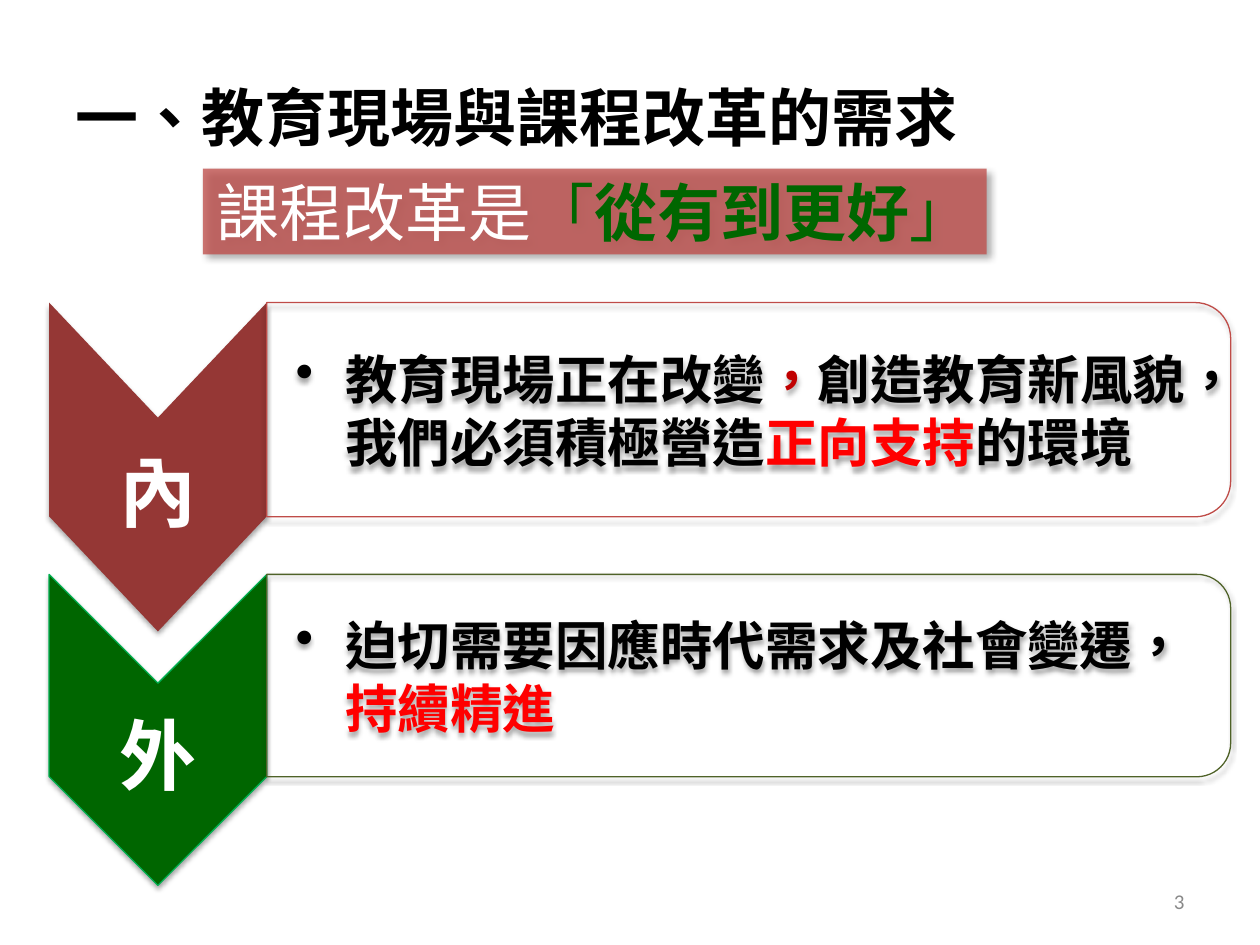
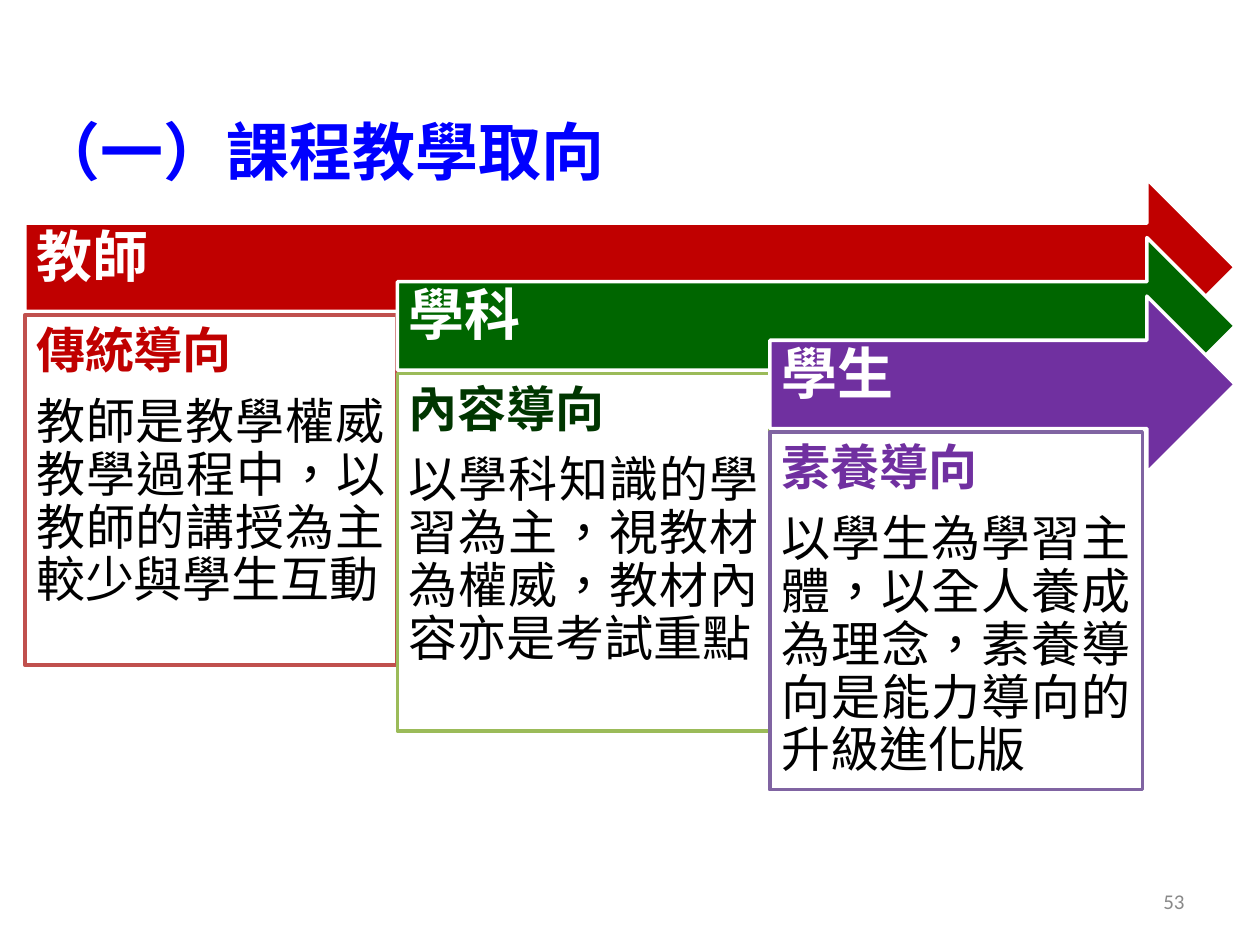
from dataclasses import dataclass
from math import cos, pi, sin

from lxml.etree import SubElement
from pptx import Presentation
from pptx.dml.color import RGBColor
from pptx.enum.lang import MSO_LANGUAGE_ID
from pptx.enum.shapes import MSO_SHAPE
from pptx.enum.text import MSO_ANCHOR, PP_ALIGN
from pptx.oxml.ns import qn
from pptx.util import Cm, Pt


@dataclass(frozen=True)
class Theme:
    """Hold the colours, fonts and type sizes of the deck."""
    face: str = "Noto Sans CJK SC"
    digit: str = "Calibri"
    black: str = "000000"
    white: str = "FFFFFF"
    gray: str = "898989"
    blue: str = "0000FF"
    red: str = "FF0000"
    deep: str = "C00000"
    rose: str = "C0504D"
    brick: str = "953735"
    rim: str = "BF4C48"
    green: str = "006600"
    mint: str = "00B050"
    olive: str = "4F6228"
    lime: str = "9BBB59"
    pine: str = "003600"
    plum: str = "7030A0"
    mauve: str = "8064A2"
    sign: int = 44
    title: int = 36
    label: int = 32
    point: int = 30
    body: int = 28
    foot: int = 12


T = Theme()


def style(run, size, color, bold=False, face=T.face):
    """Set the font of one run."""
    font = run.font
    font.size, font.bold, font.name = Pt(size), bold, face
    font.color.rgb = RGBColor.from_string(color)
    font.language_id = MSO_LANGUAGE_ID.TRADITIONAL_CHINESE
    SubElement(run.font._element, qn("a:ea"), typeface=face)


def frame(shape, inset=(0.25, 0.13, 0.25, 0.13), anchor=MSO_ANCHOR.MIDDLE):
    """Prepare the text frame of a shape and return it."""
    text = shape.text_frame
    text.word_wrap, text.vertical_anchor = True, anchor
    (text.margin_left, text.margin_top,
     text.margin_right, text.margin_bottom) = [Cm(side) for side in inset]
    return text


def write(para, text, size, color, bold=False, align=PP_ALIGN.LEFT, face=T.face):
    """Fill a paragraph with text in a single style."""
    para.text, para.alignment = text, align
    style(para.runs[0], size, color, bold, face)


def blend(para, parts, size):
    """Add runs given as text, colour and weight."""
    for text, color, bold in parts:
        run = para.add_run()
        run.text = text
        style(run, size, color, bold)


def paint(shape, fill=None, line=None, width=0.75):
    """Set the fill and line of a shape and clear its shadow."""
    shape.shadow.inherit = False
    if fill:
        shape.fill.solid()
        shape.fill.fore_color.rgb = RGBColor.from_string(fill)
    else:
        shape.fill.background()
    if line:
        shape.line.color.rgb = RGBColor.from_string(line)
        shape.line.width = Pt(width)
    else:
        shape.line.fill.background()


def shade(shape, alpha=35, blur=3.1, dist=1.8, angle=90):
    """Give a shape a soft outer shadow."""
    effect = shape.element.spPr.find(qn("a:effectLst"))
    outer = SubElement(effect, qn("a:outerShdw"), blurRad=str(Pt(blur)),
                       dist=str(Pt(dist)), dir=str(angle * 60000), rotWithShape="0")
    color = SubElement(outer, qn("a:srgbClr"), val=T.black)
    SubElement(color, qn("a:alpha"), val=str(alpha * 1000))


def trace(slide, dots):
    """Draw a closed outline through points in centimetres."""
    first, *rest = [(Cm(x), Cm(y)) for x, y in dots]
    pen = slide.shapes.build_freeform(*first)
    pen.add_line_segments(rest)
    return pen.convert_to_shape()


def place(slide, box, kind=None):
    """Add a preset shape, or a text box when no kind is given."""
    spot = [Cm(side) for side in box]
    if kind is None:
        return slide.shapes.add_textbox(*spot)
    return slide.shapes.add_shape(kind, *spot)


def title(slide, box, text, color, anchor):
    """Place the slide title."""
    area = frame(place(slide, box), anchor=anchor)
    write(area.paragraphs[0], text, T.title, color, True)


def number(slide, value):
    """Place the slide number at the lower right."""
    area = frame(place(slide, (18.21, 17.65, 5.92, 1.02)))
    write(area.paragraphs[0], str(value), T.foot, T.gray, align=PP_ALIGN.RIGHT, face=T.digit)


def banner(slide, box, parts):
    """Place the tinted band below the title."""
    band = place(slide, box, MSO_SHAPE.RECTANGLE)
    paint(band, T.rose)
    tint = band.element.spPr.find(".//" + qn("a:srgbClr"))
    SubElement(tint, qn("a:alpha"), val="79000")
    shade(band, 40, 4, 3, 45)
    para = frame(band).paragraphs[0]
    para.alignment = PP_ALIGN.CENTER
    blend(para, parts, T.title)


def sign(slide, box, text, fill, line):
    """Place a chevron that points down, with one word."""
    left, top, wide, high = box
    mid, right, notch = left + wide / 2, left + wide, high * 0.35
    low = top + high
    shape = trace(slide, [(right, top), (right, low - notch), (mid, low),
                          (left, low - notch), (left, top), (mid, top + notch)])
    paint(shape, fill, line)
    shade(shape)
    para = frame(shape, (0.08, 1.2, 0.08, 0)).paragraphs[0]
    write(para, text, T.sign, T.white, True, PP_ALIGN.CENTER)
    para.line_spacing = 0.9


def panel(slide, box, parts, line):
    """Place a box with rounded right corners and a bullet point."""
    left, top, wide, high = box
    curve, right, low = high / 6, left + wide, top + high
    turns = [pi / 2 * step / 12 for step in range(13)]
    upper = [(right - curve + curve * sin(a), top + curve - curve * cos(a)) for a in turns]
    lower = [(x, 2 * top + high - y) for x, y in reversed(upper)]
    shape = trace(slide, [(left, top), *upper, *lower, (left, low)])
    paint(shape, line=line)
    shade(shape)
    para = frame(shape, (0.58, 0.25, 0.25, 0.25)).paragraphs[0]
    para.alignment = PP_ALIGN.LEFT
    props = para._p.get_or_add_pPr()
    props.set("marL", str(Cm(1)))
    props.set("indent", str(Cm(-1)))
    SubElement(props, qn("a:buChar"), char="•")
    blend(para, parts, T.point)


def arrow(slide, box, text, fill):
    """Place a labelled right arrow."""
    shape = place(slide, box, MSO_SHAPE.RIGHT_ARROW)
    paint(shape, fill, T.white, 2)
    para = frame(shape, (0.23, 0.23, 0, 0.56)).paragraphs[0]
    write(para, text, T.label, T.white, True)
    para.line_spacing = 0.9


def card(slide, box, head, lines, color, line):
    """Place a card with a heading and justified text."""
    shape = place(slide, box, MSO_SHAPE.RECTANGLE)
    paint(shape, T.white, line, 2)
    area = frame(shape, (0.23,) * 4, MSO_ANCHOR.TOP)
    para = area.paragraphs[0]
    write(para, head, T.body, color, True)
    para.line_spacing, para.space_after = 0.9, Pt(10)
    for text in lines:
        para = area.add_paragraph()
        write(para, text, T.body, T.black, align=PP_ALIGN.JUSTIFY)
        para.line_spacing = 0.9


def needs(slide):
    """Build the slide on the needs for reform."""
    banner(slide, (4.09, 3.4, 15.8, 1.73),
           [("課程改革是", T.white, False), ("「", T.green, False),
            ("從有到更好", T.green, True), ("」", T.green, False)])
    number(slide, 3)
    rows = [
        (6.1, 6.63, 4.32, "內", T.brick, None, T.rim,
         [("教育現場正在改變", T.black, True), ("，", T.deep, True),
          ("創造教育新風貌，我們必須積極營造", T.black, True),
          ("正向支持", T.red, True), ("的環境", T.black, True)]),
        (11.58, 6.27, 4.08, "外", T.green, T.mint, T.olive,
         [("迫切需要因應時代需求及社會變遷，", T.black, True),
          ("持續精進", T.red, True)]),
    ]
    left, wide = 0.99, 4.39
    for top, tall, high, word, fill, edge, line, parts in rows:
        sign(slide, (left, top, wide, tall), word, fill, edge)
        panel(slide, (left + wide, top, 19.43, high), parts, line)
    title(slide, (1.27, 0.76, 22.86, 3.18), "一、教育現場與課程改革的需求",
          T.black, MSO_ANCHOR.MIDDLE)


def trends(slide):
    """Build the slide on the three teaching trends."""
    number(slide, 53)
    steps = [
        ("教師", "傳統導向", ["教師是教學權威，", "教學過程中，以教師的講授為主，較少與學生互動"],
         T.deep, T.deep, T.rose, 7.06),
        ("學科", "內容導向", ["以學科知識的學習為主，視教材為權威，教材內容亦是考試重點"],
         T.green, T.pine, T.lime, 7.21),
        ("學生", "素養導向", ["以學生為學習主體，以全人養成為理念，素養導向是能力導向的升級進化版"],
         T.plum, T.plum, T.mauve, 7.21),
    ]
    wide, right = 7.51, 24.9
    for step, (word, head, lines, fill, color, line, high) in enumerate(steps):
        left, top = 0.5 + step * wide, 3.61 + step * 1.18
        arrow(slide, (left, top, right - left, 3.56), word, fill)
        card(slide, (left, top + 2.74, wide, high), head, lines, color, line)
    title(slide, (0.5, 2.13, 20.83, 2.03), "（一）課程教學取向", T.blue, MSO_ANCHOR.TOP)


def main():
    """Build and save the deck."""
    deck = Presentation()
    deck.slide_width, deck.slide_height = Cm(25.4), Cm(19.05)
    for build in (needs, trends):
        build(deck.slides.add_slide(deck.slide_layouts[6]))
    deck.save("out.pptx")


if __name__ == "__main__":
    main()
